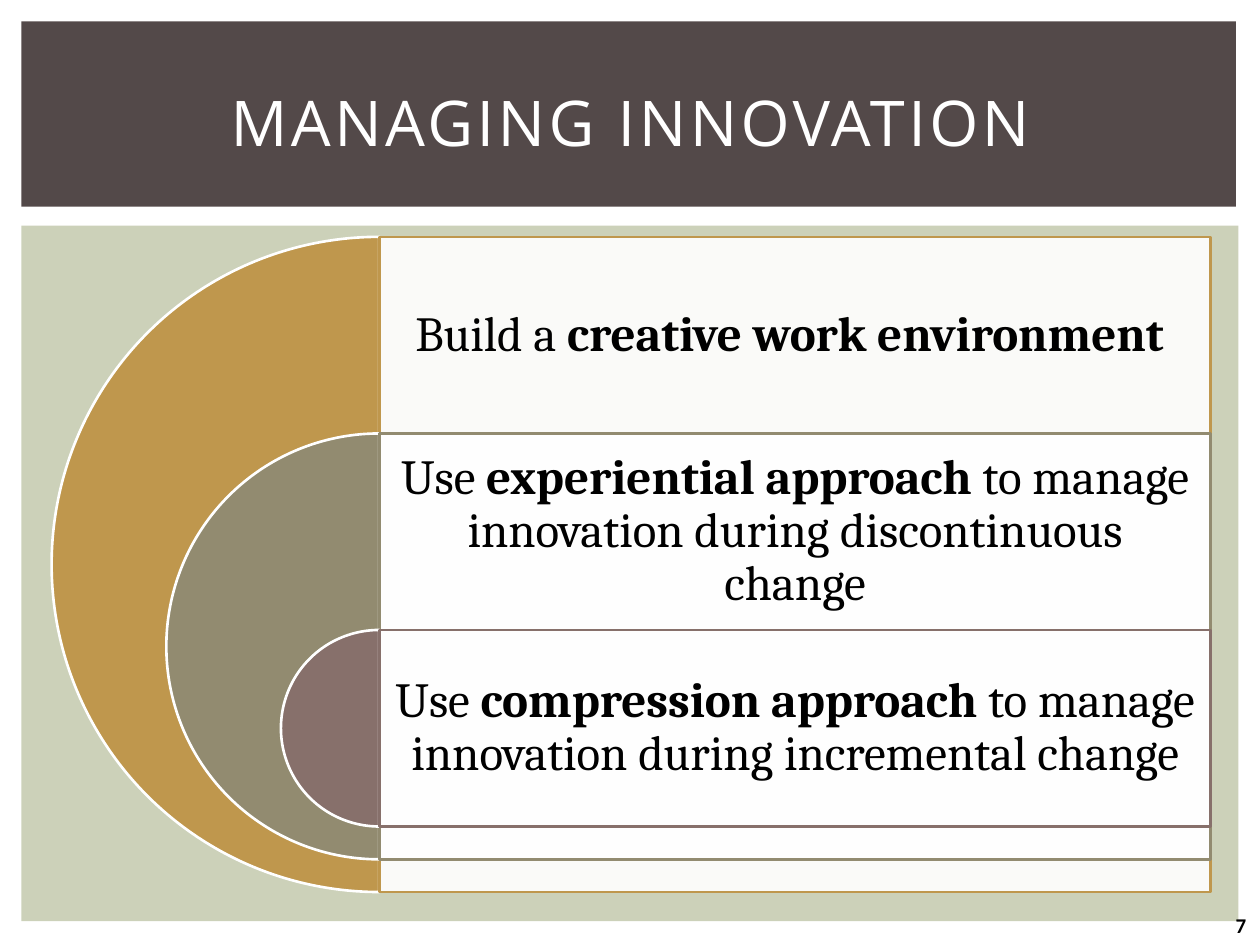
from dataclasses import dataclass

import pptx
import pptx.dml.color
import pptx.enum.shapes
import pptx.enum.text
import pptx.oxml
import pptx.oxml.ns
import pptx.util
from pptx.util import Inches

ALIGN = pptx.enum.text.PP_ALIGN
ANCHOR = pptx.enum.text.MSO_ANCHOR
SHAPE = pptx.enum.shapes.MSO_SHAPE

CENTER_X = 3.01      # flat edge shared by all half circles
TOP = 1.88
ROW_HEIGHT = 1.56
LIP = 0.26           # strip by which each layer shows below the next one
PANEL_WIDTH = 6.6


@dataclass
class Layer:
    color: str
    lead: str
    emphasis: str
    rest: str = ""


LAYERS = [
    Layer("BF974D", "Build a ", "creative work environment "),
    Layer("928B70", "Use ", "experiential approach ",
          "to manage innovation during discontinuous change"),
    Layer("87706B", "Use ", "compression approach ",
          "to manage innovation during incremental change"),
]


def rgb(value: str) -> pptx.dml.color.RGBColor:
    return pptx.dml.color.RGBColor.from_string(value)


def add_filled(slide, kind, left: float, top: float, width: float, height: float,
               fill: str, line: str = ""):
    shape = slide.shapes.add_shape(
        kind, Inches(left), Inches(top), Inches(width), Inches(height))
    shape.shadow.inherit = False
    shape.fill.solid()
    shape.fill.fore_color.rgb = rgb(fill)
    if line:
        shape.line.color.rgb = rgb(line)
        shape.line.width = pptx.util.Pt(1.5)
    else:
        shape.line.fill.background()
    return shape


def set_opacity(shape, percent: int) -> None:
    color = shape.fill._xPr.find(".//" + pptx.oxml.ns.qn("a:srgbClr"))
    alpha = pptx.oxml.parse_xml(
        f'<a:alpha {pptx.oxml.ns.nsdecls("a")} val="{percent * 1000}"/>')
    color.append(alpha)


def add_text(slide, left: float, top: float, width: float, height: float,
             runs: list[tuple[str, bool]], font: str, size: int, color: str,
             align=ALIGN.CENTER, anchor=ANCHOR.MIDDLE):
    """Add a one-paragraph text box from (text, bold) runs."""
    box = slide.shapes.add_textbox(
        Inches(left), Inches(top), Inches(width), Inches(height))
    frame = box.text_frame
    frame.word_wrap = True
    frame.vertical_anchor = anchor
    paragraph = frame.paragraphs[0]
    paragraph.alignment = align
    paragraph.font.name = font
    paragraph.font.size = pptx.util.Pt(size)
    paragraph.font.color.rgb = rgb(color)
    for text, bold in runs:
        run = paragraph.add_run()
        run.text = text
        run.font.bold = bold
    return frame


def add_layer(slide, index: int, layer: Layer) -> None:
    """Draw a half circle, its panel and its text."""
    top = TOP + index * ROW_HEIGHT
    layers_inside = len(LAYERS) - 1 - index
    diameter = ROW_HEIGHT + layers_inside * (ROW_HEIGHT + LIP)

    half_circle = add_filled(slide, SHAPE.PIE, CENTER_X - diameter / 2, top,
                             diameter, diameter, layer.color, "FFFFFF")
    # Pie angles are in 60000ths of a degree, adjustments in 100000ths
    for position, degrees in enumerate((90, 270)):
        half_circle.adjustments[position] = degrees * 0.6

    panel = add_filled(slide, SHAPE.RECTANGLE, CENTER_X, top,
                       PANEL_WIDTH, diameter, "FFFFFF", layer.color)
    set_opacity(panel, 90)

    runs = [(layer.lead, False), (layer.emphasis, True)]
    if layer.rest:
        runs.append((layer.rest, False))
    frame = add_text(slide, CENTER_X, top, PANEL_WIDTH, ROW_HEIGHT,
                     runs, "Cambria", 28, "000000")
    frame.margin_left = frame.margin_right = Inches(0.12)
    frame.margin_top = frame.margin_bottom = Inches(0.12)
    frame.paragraphs[0].line_spacing = 0.9


def main() -> None:
    presentation = pptx.Presentation()
    presentation.slide_width = Inches(10)
    presentation.slide_height = Inches(7.5)
    slide = presentation.slides.add_slide(presentation.slide_layouts[6])

    add_filled(slide, SHAPE.RECTANGLE, 0.17, 1.79, 9.66, 5.52, "CCD1B9")
    add_filled(slide, SHAPE.RECTANGLE, 0.17, 0.17, 9.64, 1.47, "534949")
    add_text(slide, 7.35, 7.09, 2.64, 0.4, [("7", True)], "Calibri", 12, "000000",
             ALIGN.RIGHT, ANCHOR.BOTTOM)

    for index, layer in enumerate(LAYERS):
        add_layer(slide, index, layer)

    title = add_text(slide, 0.42, 0.39, 9.17, 1.15, [("MANAGING INNOVATION", False)],
                     "Open Sans", 36, "FFFFFF")
    title.paragraphs[0].runs[0]._r.get_or_add_rPr().set("spc", "200")

    presentation.save("out.pptx")


if __name__ == "__main__":
    main()
